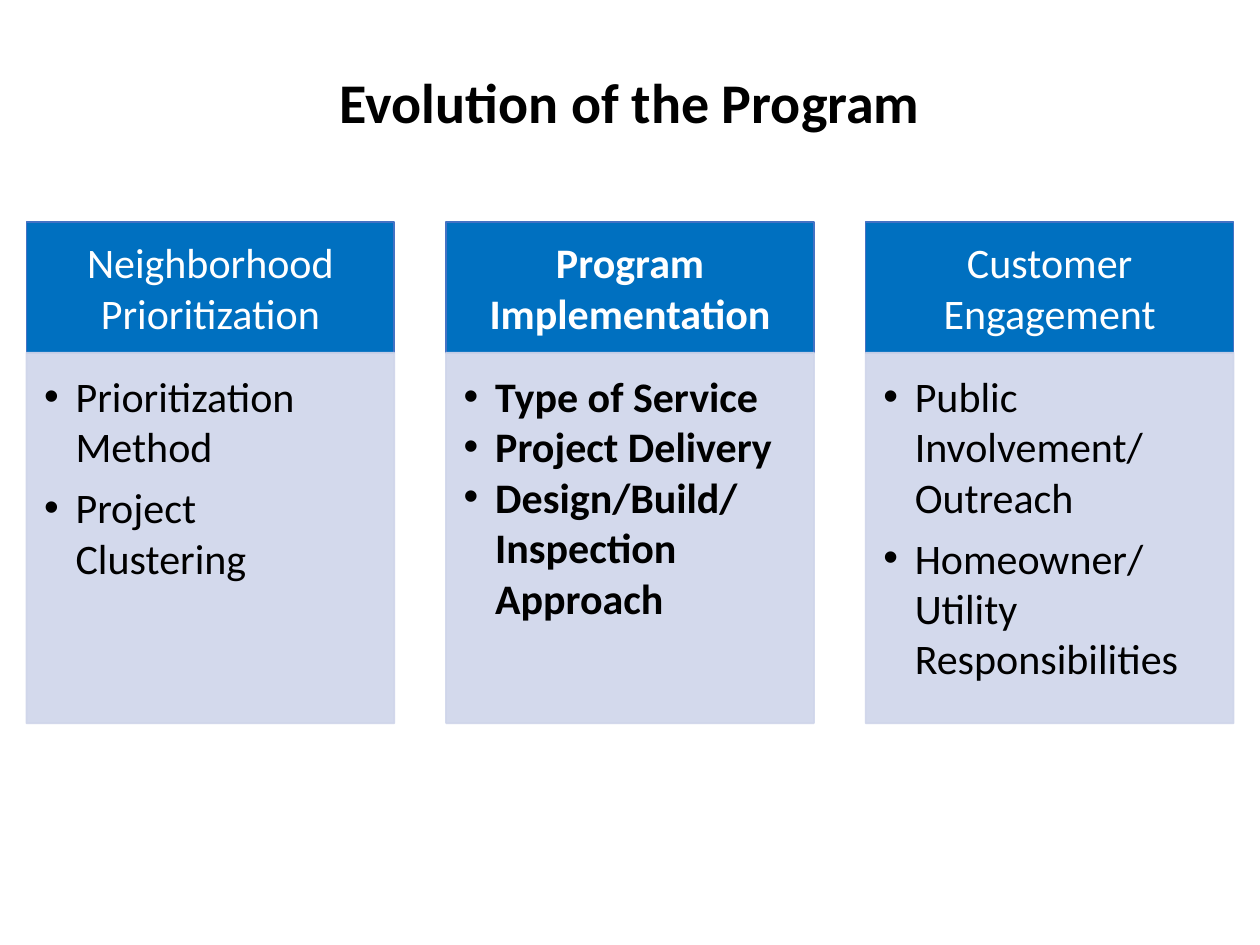
from lxml.etree import SubElement
from pptx import Presentation
from pptx.dml.color import RGBColor
from pptx.enum.shapes import MSO_SHAPE as Shape
from pptx.enum.text import MSO_ANCHOR as Anchor, PP_ALIGN as Align
from pptx.oxml.ns import qn
from pptx.util import Inches, Pt

COLORS = {
    "text": "000000",
    "header": "0070C0",
    "header_line": "4472C4",
    "header_text": "FFFFFF",
    "body": "CFD5EA",
}
COLUMNS = [
    ("Neighborhood Prioritization", ["Prioritization Method", "Project Clustering"], False),
    ("Program Implementation",
     ["Type of Service", "Project Delivery", "Design/Build/ Inspection Approach"], True),
    ("Customer Engagement",
     ["Public Involvement/ Outreach", "Homeowner/ Utility Responsibilities"], False),
]


class ProgramSlide:
    """Title and header-over-list columns in one shared style."""

    font_name = "Calibri"
    left, pitch, width = 0.21, 3.33, 2.92
    rows = {"header": (1.76, 1.04), "body": (2.8, 2.94)}

    def __init__(self, presentation):
        self.slide = presentation.slides.add_slide(presentation.slide_layouts[5])

    def style(self, paragraph, size, color, bold):
        font = paragraph.font
        font.name, font.size, font.bold = self.font_name, Pt(size), bold
        font.color.rgb = RGBColor.from_string(COLORS[color])

    def title(self, text):
        title = self.slide.shapes.title
        title.left, title.top = Inches(0.69), Inches(0.4)
        title.width, title.height = Inches(8.62), Inches(0.88)
        frame = title.text_frame
        frame.text = text
        frame.vertical_anchor = Anchor.MIDDLE
        paragraph = frame.paragraphs[0]
        paragraph.alignment, paragraph.line_spacing = Align.CENTER, 0.9
        self.style(paragraph, 32, "text", True)

    def panel(self, column, row, line, margins, anchor, opacity=100):
        top, height = self.rows[row]
        shape = self.slide.shapes.add_shape(
            Shape.RECTANGLE, Inches(self.left + column * self.pitch), Inches(top),
            Inches(self.width), Inches(height))
        shape.shadow.inherit = False
        shape.fill.solid()
        shape.fill.fore_color.rgb = RGBColor.from_string(COLORS[row])
        shape.line.color.rgb = RGBColor.from_string(COLORS[line])
        shape.line.width = Pt(1)
        if opacity < 100:
            for color in shape._element.spPr.iter(qn("a:srgbClr")):
                SubElement(color, qn("a:alpha"), val=str(opacity * 1000))
        frame = shape.text_frame
        frame.word_wrap, frame.vertical_anchor = True, anchor
        (frame.margin_left, frame.margin_top,
         frame.margin_right, frame.margin_bottom) = map(Inches, margins)
        return frame

    def header(self, column, text, bold):
        frame = self.panel(column, "header", "header_line", (0.19, 0.11, 0.19, 0.11), Anchor.MIDDLE)
        frame.text = text
        paragraph = frame.paragraphs[0]
        paragraph.alignment, paragraph.space_after = Align.CENTER, Pt(6)
        self.style(paragraph, 24, "header_text", bold)

    def bullets(self, column, items, bold):
        frame = self.panel(column, "body", "body", (0.14, 0.14, 0.19, 0.21), Anchor.TOP, opacity=90)
        frame.text = "\n".join(items)
        for paragraph in frame.paragraphs:
            paragraph.level, paragraph.alignment = 1, Align.LEFT
            paragraph.space_after = Pt(0 if bold else 6)
            properties = paragraph._p.get_or_add_pPr()
            properties.set("marL", str(Inches(0.25)))
            properties.set("indent", str(-Inches(0.25)))
            SubElement(properties, qn("a:buFont"), typeface="Arial")
            SubElement(properties, qn("a:buChar"), char="•")
            self.style(paragraph, 24, "text", bold)


def main():
    presentation = Presentation()
    presentation.slide_width, presentation.slide_height = Inches(10), Inches(7.5)
    slide = ProgramSlide(presentation)
    slide.title("Evolution of the Program")
    for column, (heading, items, bold) in enumerate(COLUMNS):
        slide.header(column, heading, bold)
        slide.bullets(column, items, bold)
    presentation.save("out.pptx")


if __name__ == "__main__":
    main()
